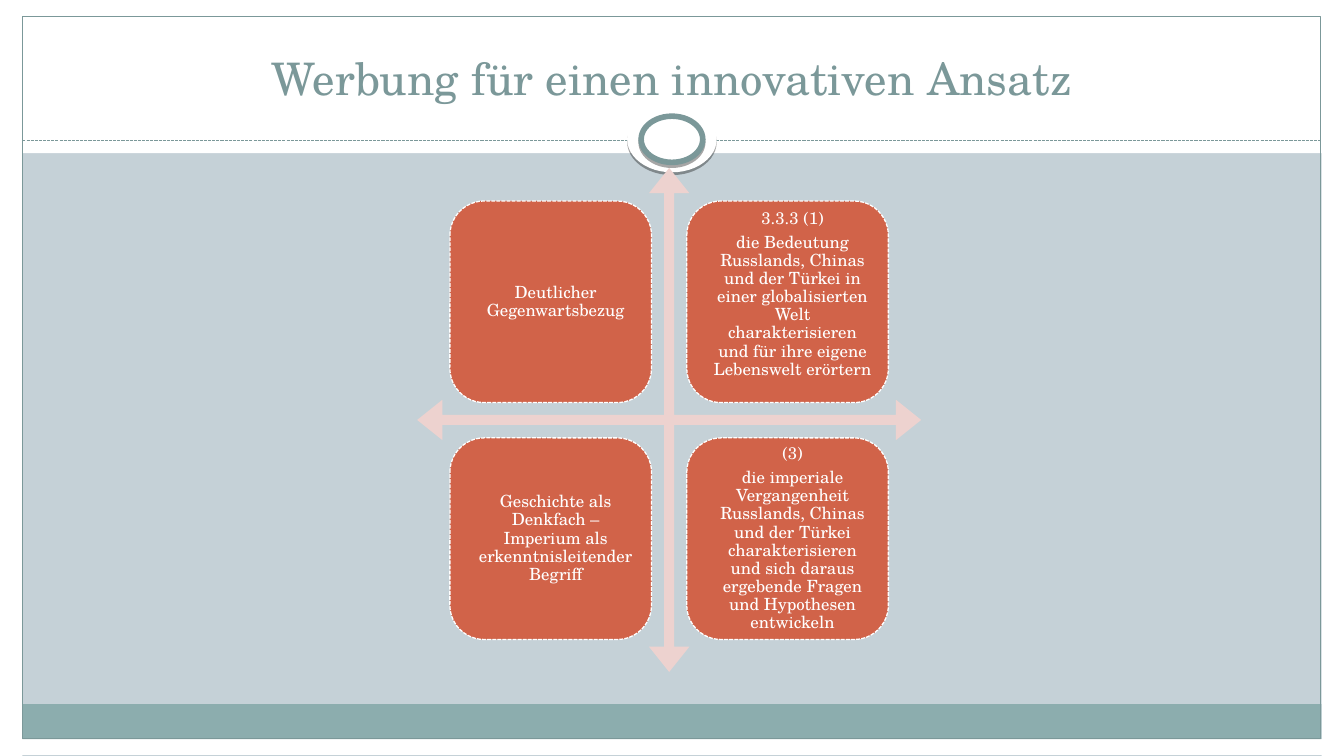
import pptx
import pptx.util
import pptx.dml.color
import pptx.enum.dml
import pptx.enum.shapes
import pptx.enum.text
import pptx.oxml
import lxml.etree

Pt = pptx.util.Pt
MSO = pptx.enum.shapes.MSO_SHAPE
DASH = pptx.enum.dml.MSO_LINE
ANCHOR = pptx.enum.text.MSO_ANCHOR
NS = "http://schemas.openxmlformats.org/drawingml/2006/main"


def paint(fill, color):
    fill.solid()
    fill.fore_color.rgb = pptx.dml.color.RGBColor.from_string(color)


def write(tf, text, size=12, color="FFFFFF", anchor=ANCHOR.MIDDLE,
          insets=(10.8, 10.8, 3.6, 10.8), spacing=0.9, after=4.2):
    tf.word_wrap = True
    tf.auto_size = pptx.enum.text.MSO_AUTO_SIZE.NONE
    tf.vertical_anchor = anchor
    tf.margin_left, tf.margin_top, tf.margin_right, tf.margin_bottom = map(Pt, insets)
    for i, line in enumerate(text.split("\n")):
        p = tf.add_paragraph() if i else tf.paragraphs[0]
        p.alignment = pptx.enum.text.PP_ALIGN.CENTER
        p.line_spacing = spacing
        p.space_before = Pt(0)
        p.space_after = Pt(after)
        r = p.add_run()
        r.text = line
        r.font.name = "TeX Gyre Schola"
        r.font.size = Pt(size)
        paint(r.font.fill, color)


prs = pptx.Presentation()
prs.slide_width, prs.slide_height = Pt(960), Pt(540)
s = prs.slides.add_slide(prs.slide_layouts[5])
paint(s.background.fill, "C5D1D7")

panels = [
    (0, 528, 960, 11.2, "FFFFFF"),
    (0, 0, 960, 109.4, "FFFFFF"),
    (0, 0, 16, 540, "FFFFFF"),
    (944, 0, 16, 540, "FFFFFF"),
    (16, 503, 928, 25, "8CADAE"),
]
for x, y, w, h, color in panels:
    sp = s.shapes.add_shape(MSO.RECTANGLE, Pt(x), Pt(y), Pt(w), Pt(h))
    sp.shadow.inherit = False
    paint(sp.fill, color)
    sp.line.fill.background()

frame = s.shapes.add_shape(MSO.RECTANGLE, Pt(16), Pt(12), Pt(927.5), Pt(515.5))
frame.shadow.inherit = False
frame.fill.background()
paint(frame.line.fill, "7B9899")
frame.line.width = Pt(0.75)

divider = s.shapes.add_connector(
    pptx.enum.shapes.MSO_CONNECTOR.STRAIGHT, Pt(16), Pt(100.5), Pt(943.5), Pt(100.5))
paint(divider.line.fill, "7B9899")
divider.line.width = Pt(0.75)
divider.line.dash_style = DASH.SQUARE_DOT
lxml.etree.SubElement(divider._element.spPr, f"{{{NS}}}effectLst")

for x, y, w, h, ring in [(448, 75.6, 64, 47.5, 0), (458, 83, 44, 33, 4)]:
    sp = s.shapes.add_shape(MSO.OVAL, Pt(x), Pt(y), Pt(w), Pt(h))
    paint(sp.fill, "FFFFFF")
    if ring:
        paint(sp.line.fill, "7B9899")
        sp.line.width = Pt(ring)
    else:
        sp.line.fill.background()
    sp._element.spPr.append(pptx.oxml.parse_xml(
        f'<a:effectLst xmlns:a="{NS}"><a:outerShdw blurRad="0" dist="25400" dir="5400000" '
        'rotWithShape="0"><a:srgbClr val="000000"><a:alpha val="35000"/></a:srgbClr>'
        '</a:outerShdw></a:effectLst>'))

title = s.shapes.title
title.left, title.top, title.width, title.height = Pt(32), Pt(18), Pt(896), Pt(60)
write(title.text_frame, "Werbung für einen innovativen Ansatz", size=32, color="7B9899",
      anchor=ANCHOR.BOTTOM, insets=(7.2, 3.6, 7.2, 3.6), spacing=1.0, after=0)
s.shapes._spTree.append(title._element)

cross = s.shapes.add_shape(MSO.QUAD_ARROW, Pt(298), Pt(120), Pt(360), Pt(360))
cross.shadow.inherit = False
for i, value in enumerate((0.02, 0.04, 0.05)):
    cross.adjustments[i] = value
paint(cross.fill, "EDD2CF")
cross.line.fill.background()

boxes = [
    "Deutlicher Gegenwartsbezug",
    "3.3.3 (1)\ndie Bedeutung Russlands, Chinas und der Türkei in einer globalisierten "
    "Welt charakterisieren und für ihre eigene Lebenswelt erörtern",
    "Geschichte als Denkfach – Imperium als erkenntnisleitender Begriff",
    "(3)\ndie imperiale Vergangenheit Russlands, Chinas und der Türkei charakterisieren "
    "und sich daraus ergebende Fragen und Hypothesen entwickeln",
]
for i, text in enumerate(boxes):
    row, col = divmod(i, 2)
    sp = s.shapes.add_shape(MSO.ROUNDED_RECTANGLE, Pt(321.4 + 169.2 * col),
                            Pt(143.6 + 169.2 * row), Pt(144), Pt(144))
    sp.shadow.inherit = False
    sp.adjustments[0] = 0.17
    paint(sp.fill, "D16349")
    paint(sp.line.fill, "FFFFFF")
    sp.line.width = Pt(0.91)
    sp.line.dash_style = DASH.SQUARE_DOT
    write(sp.text_frame, text)
    if i == 1:
        sp.text_frame.margin_top = Pt(0)

prs.save("out.pptx")
